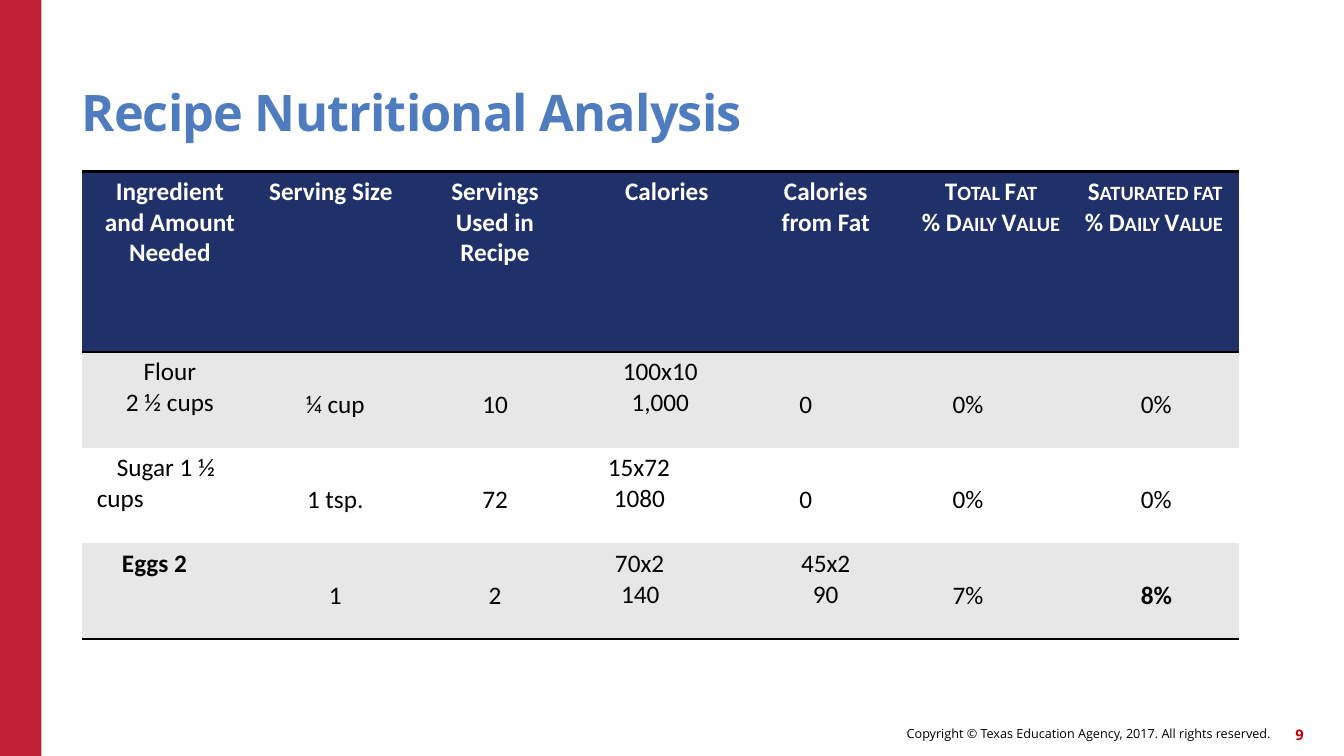
from lxml import etree
from pptx import Presentation
from pptx.dml.color import RGBColor
from pptx.enum import shapes, text
from pptx.oxml import ns
from pptx.util import Inches, Pt

RED = RGBColor(0xC0, 0x20, 0x33)
DARK_RED = RGBColor(0xC0, 0x00, 0x00)
BLUE = RGBColor(0x4E, 0x7C, 0xBE)
NAVY = RGBColor(0x20, 0x30, 0x69)
GREY = RGBColor(0xE7, 0xE7, 0xE7)
WHITE = RGBColor(0xFF, 0xFF, 0xFF)
BLACK = RGBColor(0, 0, 0)
ALIGN = text.PP_ALIGN
ANCHOR = text.MSO_ANCHOR
NO_GRID = "{2D5ABB26-0587-4C30-8999-92F81FD0307C}"


def add_label(words, spot, size, color, bold, align, anchor):
    box = slide.shapes.add_textbox(*map(Inches, spot))
    frame = box.text_frame
    frame.word_wrap = True
    frame.vertical_anchor = anchor
    frame.margin_left = frame.margin_right = 0
    frame.margin_top = frame.margin_bottom = 0
    para = frame.paragraphs[0]
    para.text = words
    para.alignment = align
    font = para.font
    font.name, font.size, font.bold = "Open Sans", Pt(size), bold
    font.color.rgb = color
    return para


def add_edge(cell, tag):
    """Draw a black rule on one side of a table cell."""
    edge = etree.Element(ns.qn(tag), w=str(Pt(2)))
    fill = etree.SubElement(edge, ns.qn("a:solidFill"))
    etree.SubElement(fill, ns.qn("a:srgbClr"), val=str(BLACK))
    cell._tc.get_or_add_tcPr().insert(0, edge)


deck = Presentation()
deck.slide_width, deck.slide_height = Inches(13.33), Inches(7.5)
slide = deck.slides.add_slide(deck.slide_layouts[6])

bar = slide.shapes.add_shape(shapes.MSO_SHAPE.RECTANGLE, 0, 0, Inches(0.41), Inches(7.5))
bar.shadow.inherit = False
bar.fill.solid()
bar.fill.fore_color.rgb = RED
bar.line.fill.background()

add_label("Copyright © Texas Education Agency, 2017. All rights reserved.",
          (6.14, 7.12, 6.46, 0.32), 9, BLACK, False, ALIGN.RIGHT, ANCHOR.MIDDLE)
add_label("9", (12.51, 7.13, 0.42, 0.32), 10.5, DARK_RED, True, ALIGN.RIGHT, ANCHOR.MIDDLE)
title = add_label("Recipe Nutritional Analysis", (0.81, 0.45, 11, 0.96),
                  36, BLUE, True, ALIGN.LEFT, ANCHOR.BOTTOM)
title.line_spacing = 0.9
title.runs[0].font._element.set("spc", "-60")

# A cell lists its paragraphs: a plain string is centred, a tuple adds
# the left margin and first-line indent. A bar switches to small capitals.
DAILY = "% D|AILY |V|ALUE"
ROWS = [
    [["Ingredient\vand Amount\vNeeded"], [("Serving Size", 0.11, 0)],
     ["Servings\vUsed in\vRecipe"], [("Calories", 0.57 - 0.1, 0)], ["Calories\vfrom Fat"],
     ["T|OTAL |F|AT", DAILY], [("S|ATURATED FAT", 0.14, 0), (DAILY, 0.11, 0)]],
    [["Flour", "2 ½ cups"], ["¼ cup"], ["10"], ["100x10", "1,000"],
     [("0", 0.56, 0)], [("0%", 0.44, 0)], ["0%"]],
    [[("Sugar 1 ½ cups", 0.15, 0.2)], ["1 tsp."], ["72"],
     [("15x72", 0.3, 0), ("1080", 0.36, 0)],
     [("0", 0.56, 0)], [("0%", 0.44, 0)], ["0%"]],
    [[("Eggs 2", 0.4, 0)], ["1"], ["2"], [("70x2", 0.37, 0), ("140", 0.43, 0)],
     ["45x2", "90"], [("7%", 0.44, 0)], ["8%"]],
]
FILLS = [NAVY, GREY, WHITE, GREY]
EDGES = {0: ["a:lnB", "a:lnT"], 3: ["a:lnB"]}

frame = slide.shapes.add_table(4, 7, Inches(0.81), Inches(1.7), Inches(11.48), Inches(4.64))
table = frame.table
table.first_row = table.horz_banding = False
table._tbl.tblPr.find(ns.qn("a:tableStyleId")).text = NO_GRID
for col, width in zip(table.columns, [1.75, 1.53] + [1.64] * 5):
    col.width = Inches(width)
for row, height in zip(table.rows, [1.79] + [0.95] * 3):
    row.height = Inches(height)

for r, row in enumerate(ROWS):
    for c, lines in enumerate(row):
        cell = table.cell(r, c)
        low = r > 0 and c > 0 and len(lines) == 1
        cell.margin_left = cell.margin_right = cell.margin_bottom = 0
        cell.margin_top = Inches(0.37 if low else 0.05)
        cell.fill.solid()
        cell.fill.fore_color.rgb = FILLS[r]
        for tag in EDGES.get(r, []):
            add_edge(cell, tag)
        for i, line in enumerate(lines):
            para = cell.text_frame.add_paragraph() if i else cell.text_frame.paragraphs[0]
            if isinstance(line, tuple):
                words, left, first = line
                para.alignment = ALIGN.LEFT
                props = para._p.get_or_add_pPr()
                props.set("marL", str(Inches(left)))
                props.set("indent", str(Inches(first)))
            else:
                words = line
                para.alignment = ALIGN.CENTER
            font = para.font
            font.name, font.size = "Calibri", Pt(18)
            font.bold = r == 0 or words in ("Eggs 2", "8%")
            font.color.rgb = BLACK if r else WHITE
            if "|" not in words:
                para.text = words
                continue
            for k, part in enumerate(words.split("|")):
                run = para.add_run()
                run.text = part
                run.font.size = Pt(14.5 if k % 2 else 18)

deck.save("out.pptx")
